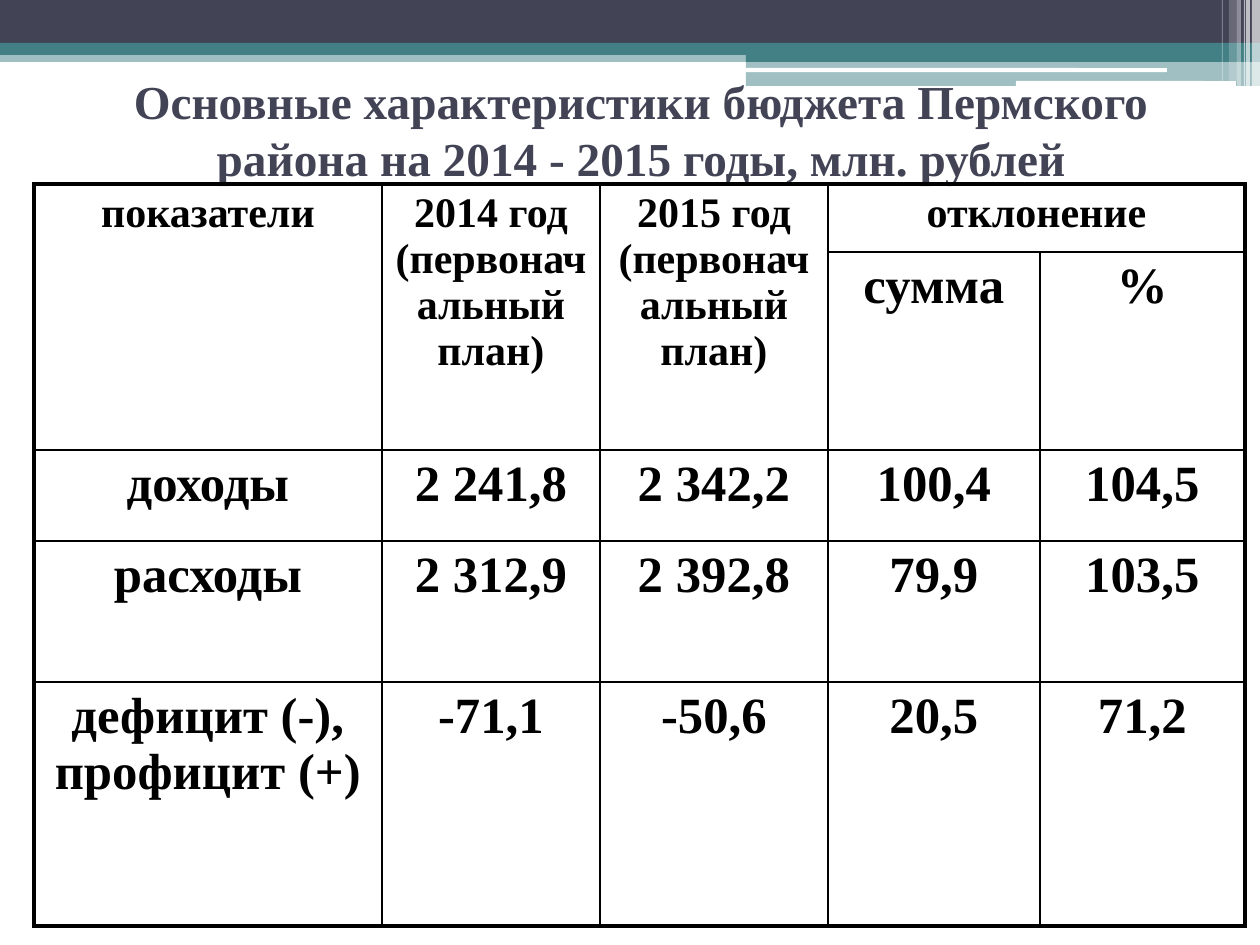
from lxml.etree import SubElement
from pptx import Presentation
from pptx.dml.color import RGBColor
from pptx.enum.shapes import MSO_SHAPE as Shape
from pptx.enum.text import MSO_ANCHOR as Anchor, PP_ALIGN as Align
from pptx.oxml.ns import qn
from pptx.util import Emu, Pt

PX = 914400 // 126
FONT = "Times New Roman"
NAVY, TEAL, WHITE, BLACK = "424456", "438086", "FFFFFF", "000000"

TITLE = "Основные характеристики бюджета Пермского района на 2014 - 2015 годы, млн. рублей"
TITLE_BOX = (74, 75, 1134, 108)

# left, top, width, height, colour, opacity in percent
BANDS = [
    (0, 50, 1260, 12, TEAL, 50),
    (0, 0, 1260, 43, NAVY, 100),
    (0, 43, 1260, 12, TEAL, 100),
    (746, 49, 514, 13, TEAL, 100),
    (746, 61, 514, 25, TEAL, 50),
]
WHITE_BARS = [(745, 68, 422, 4, WHITE, 100), (1016, 81, 220, 5, WHITE, 100)]
# left, width, height, opacity in percent
STRIPES = [(1252, 8, 86, 65), (1246, 4, 86, 65), (1244, 1, 86, 60),
           (1237, 4, 86, 40), (1229, 8, 81, 20), (1222, 1, 81, 30)]

TABLE_LEFT, TABLE_TOP = 34, 184
COLUMNS = [348, 218, 228, 212, 205]
ROWS = [68, 198, 91, 141, 244]
BUDGET = [
    ["показатели", "2014 год (первоначальный план)", "2015 год (первоначальный план)", "отклонение", ""],
    ["", "", "", "сумма", "%"],
    ["доходы", "2 241,8", "2 342,2", "100,4", "104,5"],
    ["расходы", "2 312,9", "2 392,8", "79,9", "103,5"],
    ["дефицит (-), профицит (+)", "-71,1", "-50,6", "20,5", "71,2"],
]
MERGES = [((0, 0), (1, 0)), ((0, 1), (1, 1)), ((0, 2), (1, 2)), ((0, 3), (0, 4))]
HEADER_SIZE, BODY_SIZE, TITLE_SIZE = 24, 29, 27
HEADER_LEADING = 26.4
OUTER, INNER = 2.25, 1


def px(*lengths):
    return [Emu(length * PX) for length in lengths]


def rgb(colour):
    return RGBColor.from_string(colour)


def add_bar(slide, kind, left, top, width, height, colour, opacity):
    bar = slide.shapes.add_shape(kind, *px(left, top, width, height))
    bar.shadow.inherit = False
    bar.line.fill.background()
    bar.fill.solid()
    bar.fill.fore_color.rgb = rgb(colour)
    if opacity < 100:
        tint = bar.fill._xPr.find(".//" + qn("a:srgbClr"))
        SubElement(tint, qn("a:alpha"), val=str(opacity * 1000))


def write(frame, text, size, colour):
    frame.word_wrap = True
    paragraph = frame.paragraphs[0]
    paragraph.text = text
    paragraph.alignment = Align.CENTER
    font = paragraph.font
    font.name, font.size, font.bold = FONT, Pt(size), True
    font.color.rgb = rgb(colour)


def write_header(cell, text):
    """Fixed leading and no bottom margin keep the merged cells within their rows."""
    write(cell.text_frame, text, HEADER_SIZE, BLACK)
    cell.text_frame.paragraphs[0].line_spacing = Pt(HEADER_LEADING)
    cell.margin_bottom = 0


def add_border(cell, side, weight):
    line = SubElement(cell._tc.get_or_add_tcPr(), qn("a:ln" + side), w=str(Pt(weight)))
    fill = SubElement(line, qn("a:solidFill"))
    SubElement(fill, qn("a:srgbClr"), val=BLACK)


def add_budget_table(slide):
    frame = slide.shapes.add_table(
        len(ROWS), len(COLUMNS), *px(TABLE_LEFT, TABLE_TOP, sum(COLUMNS), sum(ROWS)))
    table = frame.table
    table.first_row = table.horz_banding = False
    for column, width in zip(table.columns, COLUMNS):
        column.width = Emu(width * PX)
    for row, height in zip(table.rows, ROWS):
        row.height = Emu(height * PX)
    for first, last in MERGES:
        table.cell(*first).merge(table.cell(*last))

    for r, texts in enumerate(BUDGET):
        for c, text in enumerate(texts):
            cell = table.cell(r, c)
            on_edge = {
                "L": c == 0,
                "R": c + cell.span_width == len(COLUMNS) or c == len(COLUMNS) - 1,
                "T": r == 0,
                "B": r == len(ROWS) - 1,
            }
            for side, outer in on_edge.items():
                add_border(cell, side, OUTER if outer else INNER)
            cell.fill.background()
            if text and r == 0:
                write_header(cell, text)
            elif text:
                write(cell.text_frame, text, BODY_SIZE, BLACK)


def main():
    deck = Presentation()
    deck.slide_width, deck.slide_height = px(1260, 945)
    slide = deck.slides.add_slide(deck.slide_layouts[6])

    for band in BANDS:
        add_bar(slide, Shape.RECTANGLE, *band)
    for bar in WHITE_BARS:
        add_bar(slide, Shape.ROUNDED_RECTANGLE, *bar)
    for left, width, height, opacity in STRIPES:
        add_bar(slide, Shape.RECTANGLE, left, 0, width, height, WHITE, opacity)

    title = slide.shapes.add_textbox(*px(*TITLE_BOX)).text_frame
    title.vertical_anchor = Anchor.MIDDLE
    write(title, TITLE, TITLE_SIZE, NAVY)
    add_budget_table(slide)
    deck.save("out.pptx")


if __name__ == "__main__":
    main()
